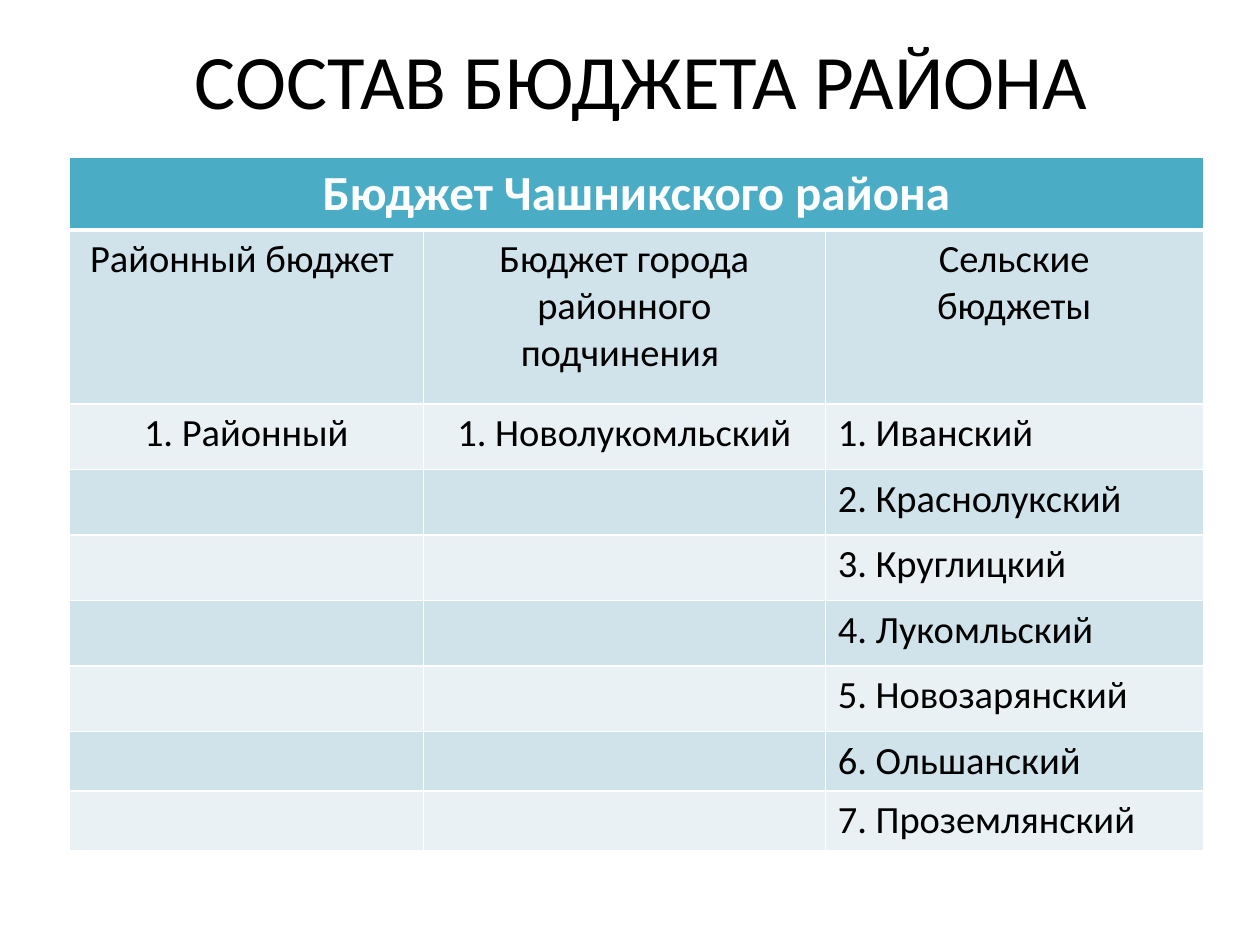
import pptx
import pptx.dml.color
import pptx.enum.text
import pptx.oxml.ns
import pptx.util
from dataclasses import dataclass
from lxml import etree

Inches = pptx.util.Inches
Align = pptx.enum.text.PP_ALIGN
Anchor = pptx.enum.text.MSO_ANCHOR


@dataclass(frozen=True)
class Theme:
    """Colours, font and type sizes of the slide."""
    font: str = "Calibri"
    ink: str = "000000"
    paper: str = "FFFFFF"
    header: str = "4BACC6"
    bands: tuple = ("D0E3EA", "E9F1F5")
    title_size: int = 44
    header_size: int = 28
    body_size: int = 22
    thin: float = 1
    thick: float = 3


class SlideBuilder:
    """Holds the theme and the current page, and adds elements to it."""

    def __init__(self, page, theme):
        self.page = page
        self.theme = theme

    def add_text(self, frame, text, size, color, align, bold=False):
        """Fill a text frame with one paragraph per line of text."""
        values = {"name": self.theme.font, "size": pptx.util.Pt(size), "bold": bold}
        for index, line in enumerate(text.split("\n")):
            para = frame.add_paragraph() if index else frame.paragraphs[0]
            para.alignment = align
            span = para.add_run()
            span.text = line
            for name, value in values.items():
                setattr(span.font, name, value)
            span.font.color.rgb = pptx.dml.color.RGBColor.from_string(color)

    def title(self, text, left, top, width, height):
        """Place and fill the title placeholder."""
        box = self.page.shapes.title
        places = {"left": left, "top": top, "width": width, "height": height}
        for name, value in places.items():
            setattr(box, name, Inches(value))
        box.text_frame.vertical_anchor = Anchor.MIDDLE
        self.add_text(box.text_frame, text, self.theme.title_size, self.theme.ink, Align.CENTER)

    def paint(self, cell, color, top, bottom):
        """Give a cell its borders and fill."""
        props = cell._tc.get_or_add_tcPr()
        widths = {"L": self.theme.thin, "R": self.theme.thin, "T": top, "B": bottom}
        for side, width in widths.items():
            line = etree.SubElement(props, pptx.oxml.ns.qn(f"a:ln{side}"), w=str(pptx.util.Pt(width)))
            fill = etree.SubElement(line, pptx.oxml.ns.qn("a:solidFill"))
            etree.SubElement(fill, pptx.oxml.ns.qn("a:srgbClr"), val=self.theme.paper)
        cell.fill.solid()
        cell.fill.fore_color.rgb = pptx.dml.color.RGBColor.from_string(color)

    def table(self, rows, left, top, widths, heights):
        """Add a banded table with a merged header row."""
        theme = self.theme
        frame = self.page.shapes.add_table(
            len(rows), len(widths), Inches(left), Inches(top),
            Inches(sum(widths)), Inches(sum(heights)))
        grid = frame.table
        for column, width in zip(grid.columns, widths):
            column.width = Inches(width)
        for row, height in zip(grid.rows, heights):
            row.height = Inches(height)
        grid.cell(0, 0).merge(grid.cell(0, len(widths) - 1))
        for r, texts in enumerate(rows):
            color = theme.bands[(r - 1) % 2] if r else theme.header
            above = theme.thick if r == 1 else theme.thin
            below = theme.thin if r else theme.thick
            for c, text in enumerate(texts):
                cell = grid.cell(r, c)
                self.paint(cell, color, above, below)
                if not text:
                    continue
                if r == 0:
                    self.add_text(cell.text_frame, text, theme.header_size, theme.paper, Align.CENTER, True)
                else:
                    align = Align.LEFT if r > 1 and c == 2 else Align.CENTER
                    self.add_text(cell.text_frame, text, theme.body_size, theme.ink, align)


def main():
    """Build the budget slide and save it."""
    deck = pptx.Presentation()
    deck.slide_width, deck.slide_height = Inches(10), Inches(7.5)
    builder = SlideBuilder(deck.slides.add_slide(deck.slide_layouts[5]), Theme())
    builder.title("СОСТАВ БЮДЖЕТА РАЙОНА", 0.59, 0, 9, 1.25)

    villages = ["Иванский", "Краснолукский", "Круглицкий", "Лукомльский",
                "Новозарянский", "Ольшанский", "Проземлянский"]
    rows = [
        ["Бюджет Чашникского района", "", ""],
        ["Районный бюджет ", "Бюджет города районного подчинения ", "Сельские\nбюджеты"],
    ]
    for number, village in enumerate(villages, 1):
        first = ["1. Районный", "1. Новолукомльский"] if number == 1 else ["", ""]
        rows.append(first + [f"{number}. {village}"])
    heights = [0.57, 1.38] + [0.52] * 5 + [0.47] * 2
    builder.table(rows, 0.55, 1.25, [2.81, 3.19, 3], heights)
    deck.save("out.pptx")


if __name__ == "__main__":
    main()
